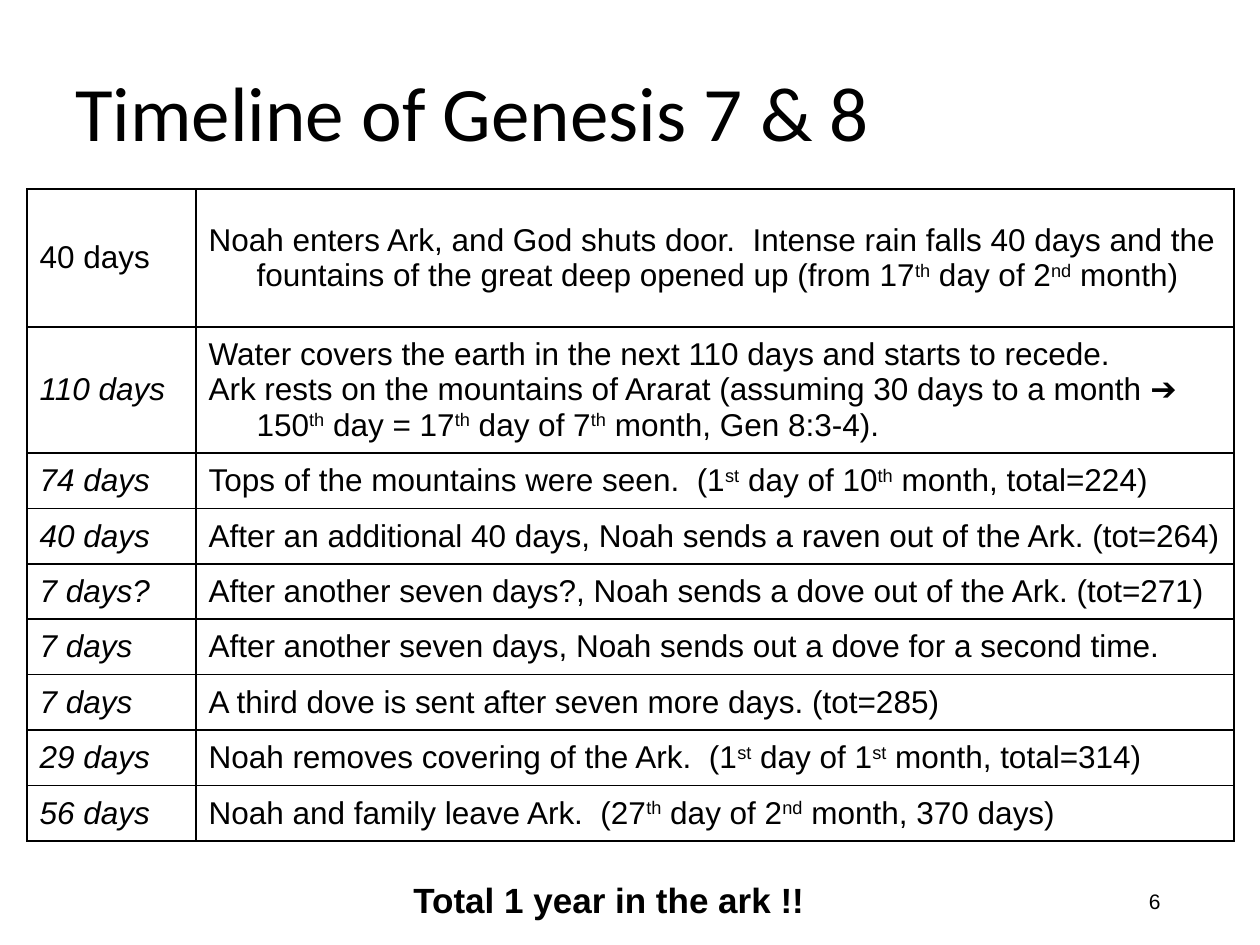
"""Build the Genesis 7 and 8 timeline slide."""
from lxml import etree
from pptx import Presentation
from pptx import util as u
from pptx.dml.color import RGBColor
from pptx.enum import text
from pptx.oxml.ns import qn

BLACK = RGBColor(0, 0, 0)
SCALE = 914400 / 126
ROWS = [
    ("40 days", ["Noah enters Ark, and God shuts door.  Intense rain falls 40 days and the "
                 "fountains of the great deep opened up (from 17^th^ day of 2^nd^ month)"]),
    ("110 days", ["Water covers the earth in the next 110 days and starts to recede.",
                  "Ark rests on the mountains of Ararat (assuming 30 days to a month ➔ "
                  "150^th^ day = 17^th^ day of 7^th^ month, Gen 8:3-4)."]),
    ("74 days", ["Tops of the mountains were seen.  (1^st^ day of 10^th^ month, total=224)"]),
    ("40 days", ["After an additional 40 days, Noah sends a raven out of the Ark. (tot=264)"]),
    ("7 days?", ["After another seven days?, Noah sends a dove out of the Ark. (tot=271)"]),
    ("7 days", ["After another seven days, Noah sends out a dove for a second time."]),
    ("7 days", ["A third dove is sent after seven more days. (tot=285)"]),
    ("29 days", ["Noah removes covering of the Ark.  (1^st^ day of 1^st^ month, total=314)"]),
    ("56 days", ["Noah and family leave Ark.  (27^th^ day of 2^nd^ month, 370 days)"]),
]


def px(length):
    """Turn px into EMU."""
    return u.Emu(round(length * SCALE))


def write(frame, lines, size=18, font="Arial", bold=False, italic=False,
          align=text.PP_ALIGN.LEFT, spacing=None, hang=0):
    """Fill a text frame with lines, raising what stands between carets."""
    for index, line in enumerate(lines):
        para = frame.add_paragraph() if index else frame.paragraphs[0]
        para.alignment = align
        if spacing:
            para.line_spacing = spacing
        if hang:
            properties = para._p.get_or_add_pPr()
            properties.set("marL", str(px(hang)))
            properties.set("indent", str(-px(hang)))
        for part, words in enumerate(line.split("^")):
            span = para.add_run()
            span.text = words
            span.font.size, span.font.name = u.Pt(size), font
            span.font.bold, span.font.italic = bold, italic
            span.font.color.rgb = BLACK
            if part % 2:
                span._r.get_or_add_rPr().set("baseline", "30000")


class Painter:
    """Hold the style and the current slide."""

    def __init__(self, slide, line_width=1):
        """Keep the slide and the border width in points."""
        self.slide, self.line_width = slide, line_width

    def label(self, words, left, top, width, height,
              anchor=text.MSO_ANCHOR.MIDDLE, wrap=True, **style):
        """Add a text box."""
        box = self.slide.shapes.add_textbox(px(left), px(top), px(width), px(height))
        frame = box.text_frame
        frame.word_wrap, frame.vertical_anchor = wrap, anchor
        if not wrap:
            frame.auto_size = text.MSO_AUTO_SIZE.SHAPE_TO_FIT_TEXT
        write(frame, [words], **style)

    def border(self, cell):
        """Draw all four borders of a cell."""
        properties = cell._tc.get_or_add_tcPr()
        for side in ("lnL", "lnR", "lnT", "lnB"):
            line = etree.SubElement(properties, qn(f"a:{side}"), w=str(u.Pt(self.line_width)))
            fill = etree.SubElement(line, qn("a:solidFill"))
            etree.SubElement(fill, qn("a:srgbClr"), val=str(BLACK))

    def timeline(self, rows, left, top, widths, heights):
        """Add the table of durations and events."""
        table = self.slide.shapes.add_table(
            len(rows), len(widths), px(left), px(top), px(sum(widths)), px(sum(heights))).table
        table.first_row = table.horz_banding = False
        for column, width in zip(table.columns, widths):
            column.width = px(width)
        for index, (duration, events) in enumerate(rows):
            table.rows[index].height = px(heights[index])
            for column, lines in enumerate(([duration], events)):
                cell = table.cell(index, column)
                self.border(cell)
                cell.fill.background()
                cell.vertical_anchor = text.MSO_ANCHOR.MIDDLE
                write(cell.text_frame, lines, hang=48, italic=index > 0 and column == 0)


def main():
    """Build and save the deck."""
    deck = Presentation()
    deck.slide_width, deck.slide_height = px(1260), px(945)
    painter = Painter(deck.slides.add_slide(deck.slide_layouts[6]))
    painter.label("6", 890, 876, 283, 50, size=12, align=text.PP_ALIGN.RIGHT)
    painter.label("Timeline of Genesis 7 & 8", 63, 38, 1134, 157,
                  size=44, font="Calibri", spacing=0.9)
    tall = [138, 126]
    short_count = len(ROWS) - len(tall)
    short = (652 - sum(tall)) / short_count
    painter.timeline(ROWS, 27, 189, [169, 1038], tall + [short] * short_count)
    painter.label("Total 1 year in the ark !!", 401, 872, 418, 55,
                  anchor=text.MSO_ANCHOR.TOP, wrap=False, size=20, bold=True)
    deck.save("out.pptx")


if __name__ == "__main__":
    main()
